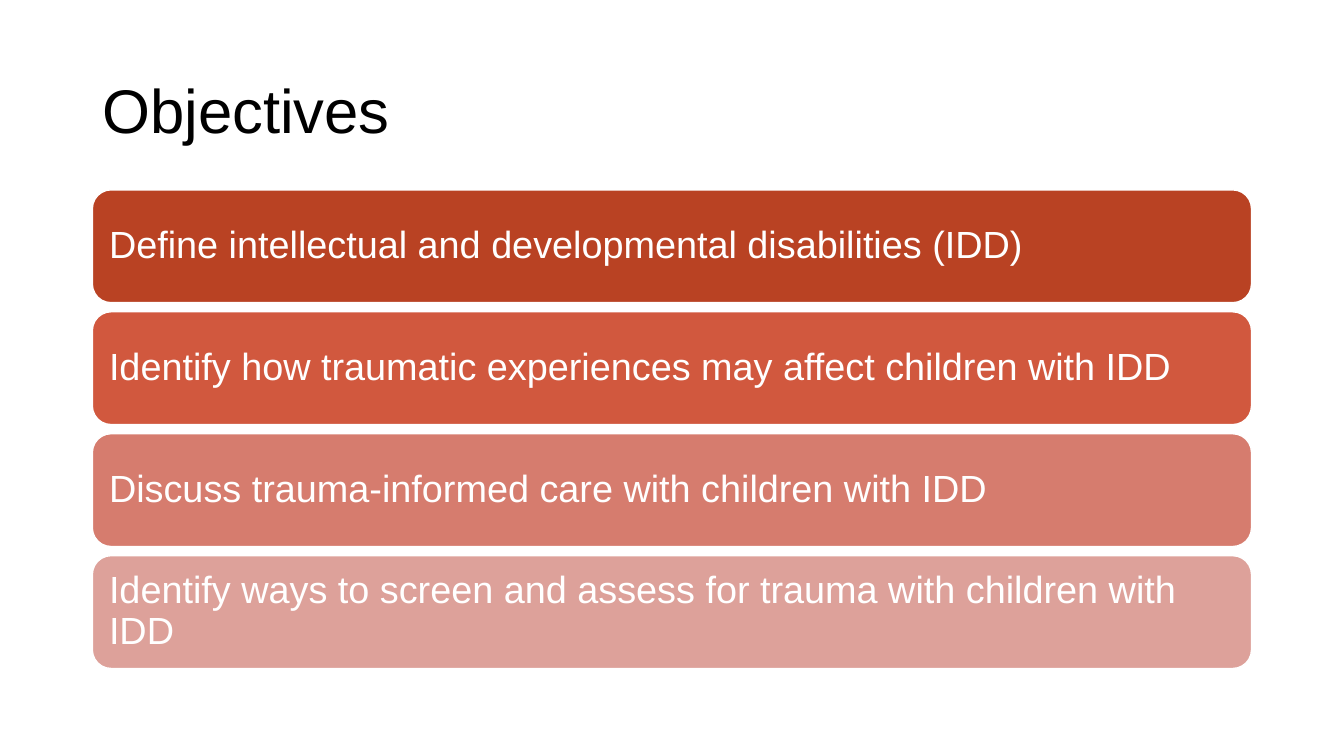
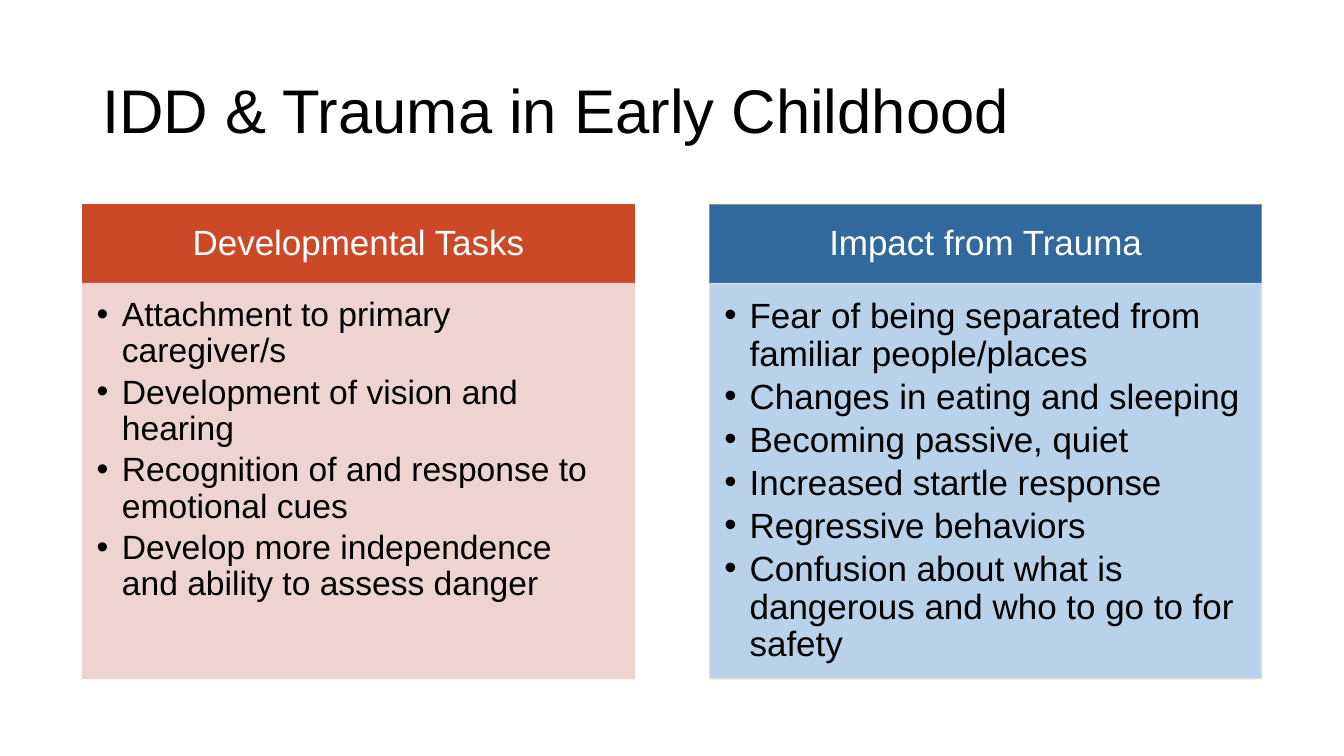
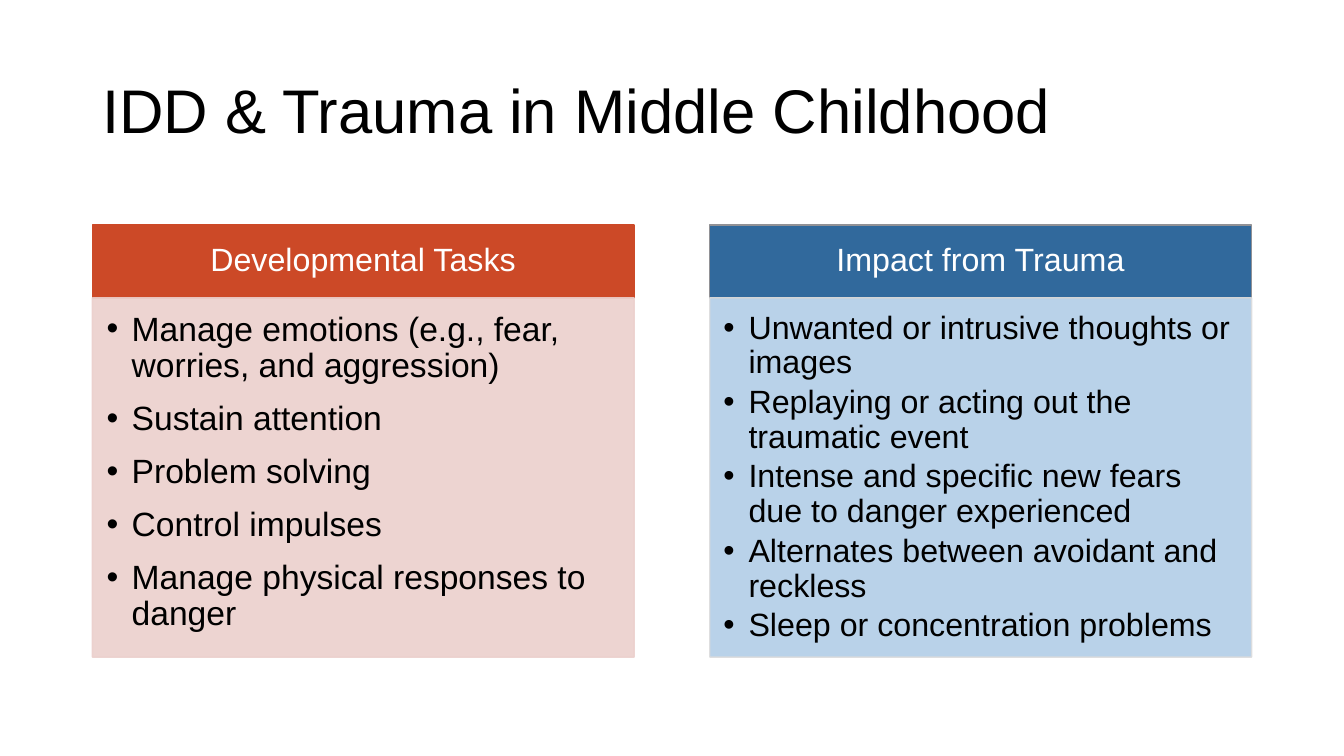
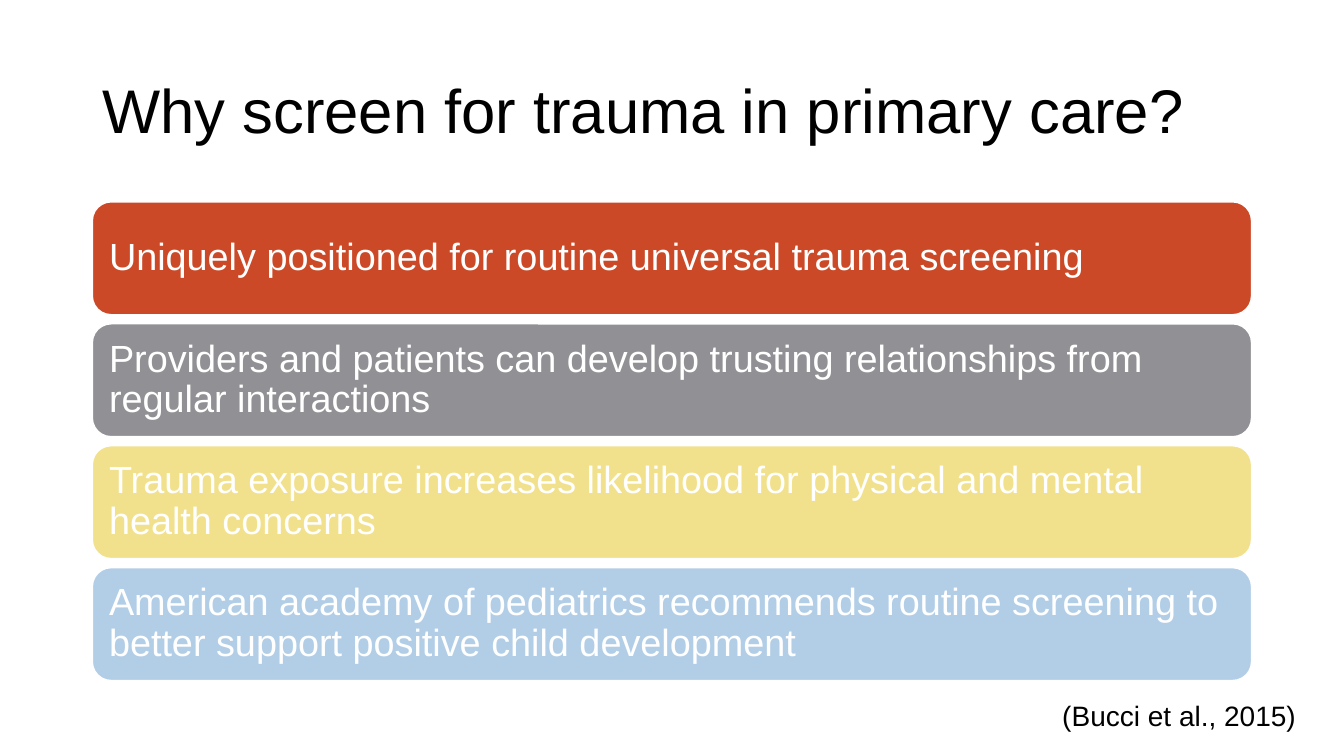
"""Build four slides on intellectual and developmental disabilities and trauma."""
from lxml import etree
from pptx import Presentation
from pptx import util as u
from pptx.dml import color
from pptx.enum import shapes, text
from pptx.oxml import ns

FONT = "Arial"
BLACK, WHITE = "000000", "FFFFFF"
ORANGE, GREY, YELLOW, PALE_BLUE = "CC4927", "919195", "F2E18C", "B2CEE7"
BLUE, PINK, PALE_GREY = "31699C", "ECD0CD", "DCDCDD"
MARGIN, CONTENT_WIDTH = 66, 828
BAR_HEIGHT, BAR_PITCH = 80.6, 87.1
BULLET_INDENT = 18


def paint(fill, hex_colour, opacity=100):
    """Give a shape, line or font fill a solid colour."""
    fill.solid()
    fill.fore_color.rgb = color.RGBColor.from_string(hex_colour)
    if opacity < 100:
        solid_colour = fill._xPr.find(ns.qn("a:solidFill"))[0]
        etree.SubElement(solid_colour, ns.qn("a:alpha"), val=str(opacity * 1000))


def write(box, lines, size, hex_colour, insets, align="LEFT", anchor="MIDDLE",
          spacing=0.9, gap=0, bullets=False, wrap=True):
    """Fill a box with one paragraph per line."""
    frame = box.text_frame
    frame.word_wrap = wrap
    frame.vertical_anchor = text.MSO_ANCHOR[anchor]
    frame.margin_left, frame.margin_top, frame.margin_right, frame.margin_bottom = map(u.Pt, insets)
    for index, line in enumerate(lines):
        para = frame.paragraphs[0] if index == 0 else frame.add_paragraph()
        para.text = line
        para.alignment = text.PP_ALIGN[align]
        para.line_spacing = spacing
        para.space_after = u.Pt(gap)
        if bullets:
            properties = para._p.get_or_add_pPr()
            properties.set("marL", str(u.Pt(BULLET_INDENT)))
            properties.set("indent", str(-u.Pt(BULLET_INDENT)))
            etree.SubElement(properties, ns.qn("a:buFont"), typeface=FONT)
            etree.SubElement(properties, ns.qn("a:buChar"), char="•")
        para.font.name = FONT
        para.font.size = u.Pt(size)
        paint(para.font.fill, hex_colour)


early_tasks = [
    "Attachment to primary caregiver/s",
    "Development of vision and hearing",
    "Recognition of and response to emotional cues",
    "Develop more independence and ability to assess danger",
]
early_impact = [
    "Fear of being separated from familiar people/places",
    "Changes in eating and sleeping",
    "Becoming passive, quiet",
    "Increased startle response",
    "Regressive behaviors",
    "Confusion about what is dangerous and who to go to for safety",
]
middle_tasks = [
    "Manage emotions (e.g., fear, worries, and aggression)",
    "Sustain attention",
    "Problem solving",
    "Control impulses",
    "Manage physical responses to danger",
]
middle_impact = [
    "Unwanted or intrusive thoughts or images",
    "Replaying or acting out the traumatic event",
    "Intense and specific new fears due to danger experienced",
    "Alternates between avoidant and reckless",
    "Sleep or concentration problems",
]
objectives = [
    ("Define intellectual and developmental disabilities (IDD)", "B94223"),
    ("Identify how traumatic experiences may affect children with IDD", "D1583E"),
    ("Discuss trauma-informed care with children with IDD", "D67C6E"),
    ("Identify ways to screen and assess for trauma with children with IDD", "DDA19A"),
]
reasons = [
    ("Uniquely positioned for routine universal trauma screening", ORANGE),
    ("Providers and patients can develop trusting relationships from regular interactions", GREY),
    ("Trauma exposure increases likelihood for physical and mental health concerns", YELLOW),
    ("American academy of pediatrics recommends routine screening to better support "
     "positive child development", PALE_BLUE),
]

deck = Presentation()
deck.slide_width, deck.slide_height = u.Pt(960), u.Pt(540)

pages = []
for title in ["Objectives", "IDD & Trauma in Early Childhood",
              "IDD & Trauma in Middle Childhood", "Why screen for trauma in primary care?"]:
    page = deck.slides.add_slide(deck.slide_layouts[6])
    title_box = page.shapes.add_textbox(u.Pt(MARGIN), u.Pt(28.8), u.Pt(CONTENT_WIDTH), u.Pt(104.4))
    write(title_box, [title], 44, BLACK, (7.2, 3.6, 7.2, 3.6))
    pages.append(page)
objectives_page, early_page, middle_page, screening_page = pages

for page, top, bars in [(objectives_page, 135.6, objectives), (screening_page, 144.2, reasons)]:
    for row, (line, hex_colour) in enumerate(bars):
        bar = page.shapes.add_shape(
            shapes.MSO_SHAPE.ROUNDED_RECTANGLE, u.Pt(MARGIN), u.Pt(top + row * BAR_PITCH),
            u.Pt(CONTENT_WIDTH), u.Pt(BAR_HEIGHT))
        bar.shadow.inherit = False
        paint(bar.fill, hex_colour)
        paint(bar.line.fill, WHITE)
        bar.line.width = u.Pt(1)
        write(bar, [line], 27, WHITE, (8, 8, 8, 8))

column_styles = [
    ("Developmental Tasks", ORANGE, ORANGE, PINK, PINK),
    ("Impact from Trauma", BLUE, GREY, PALE_BLUE, PALE_GREY),
]
comparisons = [
    (early_page, 59, 394, 146, 56.5, 282.4, 25, [(early_tasks, 24, 3.6), (early_impact, 25, 3.75)]),
    (middle_page, 66, 387, 160.8, 52, 256.6, 23, [(middle_tasks, 24, 12), (middle_impact, 23, 3.45)]),
]
for page, left, width, top, head_height, body_height, head_size, columns in comparisons:
    lefts = [left, 960 - left - width]
    for x, style, (lines, size, gap) in zip(lefts, column_styles, columns):
        heading, head_fill, head_line, body_fill, body_line = style
        parts = [(top, head_height, head_fill, head_line, 100),
                 (top + head_height, body_height, body_fill, body_line, 90)]
        boxes = []
        for y, height, fill_colour, line_colour, opacity in parts:
            box = page.shapes.add_shape(
                shapes.MSO_SHAPE.RECTANGLE, u.Pt(x), u.Pt(y), u.Pt(width), u.Pt(height))
            box.shadow.inherit = False
            paint(box.fill, fill_colour, opacity)
            paint(box.line.fill, line_colour, opacity)
            box.line.width = u.Pt(1)
            boxes.append(box)
        head, body = boxes
        write(head, [heading], head_size, WHITE, (13, 7.5, 13, 7.5), align="CENTER")
        inset = size * 0.42
        write(body, lines, size, BLACK, (inset, inset, size * 0.55, inset * 1.5),
              anchor="TOP", gap=gap, bullets=True)

citation = screening_page.shapes.add_textbox(u.Pt(751.7), u.Pt(495.4), u.Pt(182.9), u.Pt(31.7))
write(citation, ["(Bucci et al., 2015)"], 20, BLACK, (7.2, 3.6, 7.2, 3.6),
      anchor="TOP", spacing=1.0, wrap=False)

deck.save("out.pptx")
